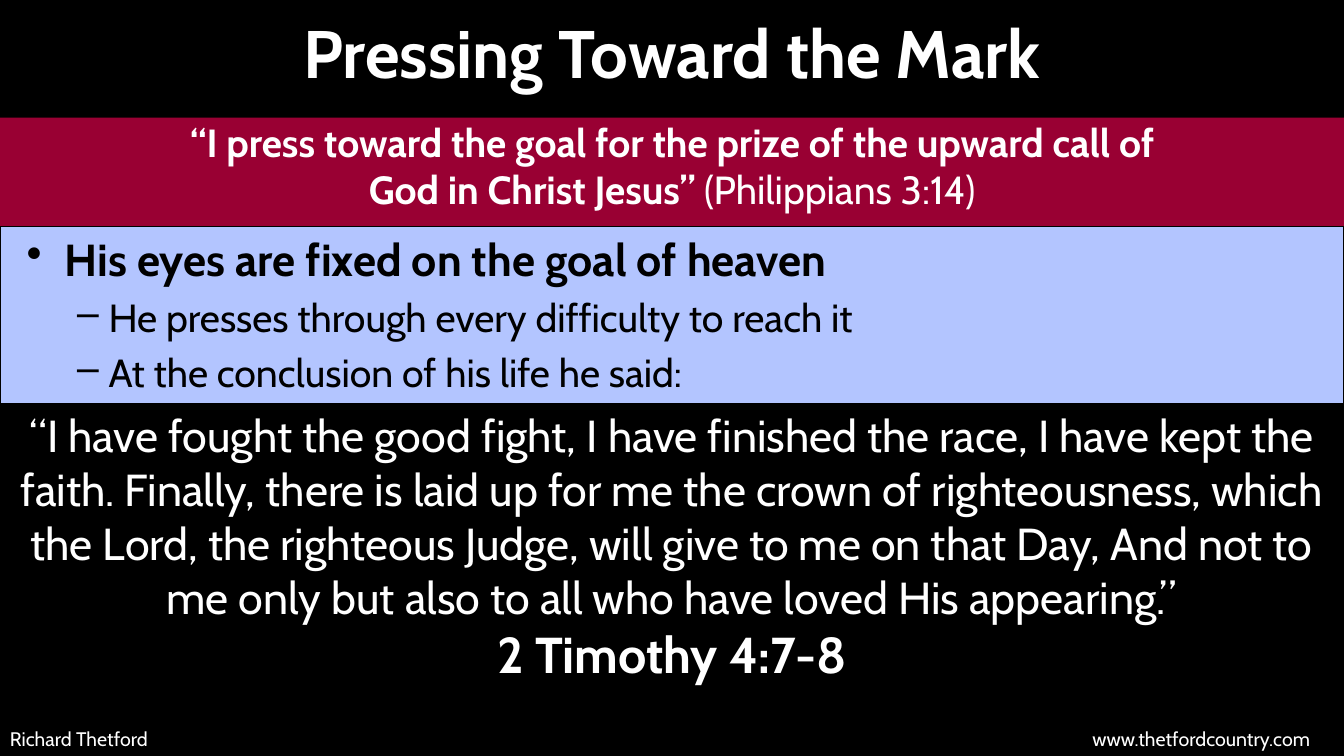
from lxml import etree
from pptx import Presentation
from pptx import util as u
from pptx.dml.color import RGBColor
from pptx.enum import shapes, text
from pptx.oxml.ns import qn

Pt = u.Pt
WIDE, HIGH = 960, 540
WHITE, BLACK, RED, BLUE = "FFFFFF", "000000", "990033", "B3C5FF"
MID, LEFT, RIGHT = text.PP_ALIGN.CENTER, text.PP_ALIGN.LEFT, text.PP_ALIGN.RIGHT


def paint(target, hue):
    target.solid()
    target.fore_color.rgb = RGBColor.from_string(hue)


def band(slide, box, hue, edge=None):
    rect = slide.shapes.add_shape(shapes.MSO_SHAPE.RECTANGLE, *map(Pt, box))
    rect.shadow.inherit = False
    paint(rect.fill, hue)
    if edge:
        paint(rect.line.fill, edge)
        rect.line.width = Pt(0.75)
    else:
        rect.line.fill.background()


def frame(slide, box):
    tf = slide.shapes.add_textbox(*map(Pt, box)).text_frame
    tf.word_wrap = True
    return tf


def style(para, size, hue=WHITE, bold=False, align=MID):
    para.alignment = align
    font = para.font
    font.name, font.size, font.bold = "Cabin", Pt(size), bold
    paint(font.fill, hue)


def bullet(para, mark, margin, hang):
    props = para._p.get_or_add_pPr()
    props.set("marL", str(Pt(margin)))
    props.set("indent", str(-Pt(hang)))
    char = etree.Element(qn("a:buChar"), char=mark)
    props.find(qn("a:defRPr")).addprevious(char)


# Heading
def title(slide, box):
    tf = frame(slide, box)
    tf.vertical_anchor = text.MSO_ANCHOR.MIDDLE
    para = tf.paragraphs[0]
    para.text = "Pressing Toward the Mark"
    style(para, 48, bold=True)


# Key verse on the red band
def verse(slide, box):
    x, y, w, h = box
    band(slide, box, RED)
    para = frame(slide, (x, y - 3, w, h - 3)).paragraphs[0]
    style(para, 28)
    lines = ("“I press toward the goal for the prize of the upward call of",
             "God in Christ Jesus” ")
    for i, line in enumerate(lines):
        if i:
            para.add_line_break()
        run = para.add_run()
        run.text, run.font.bold = line, True
    para.add_run().text = "(Philippians 3:14)"


# Bulleted points on the blue band
def points(slide, box):
    x, y, w, h = box
    band(slide, box, BLUE, BLACK)
    tf = frame(slide, (x + 12, y, w - 24, h + 6))
    head, *subs = ("His eyes are fixed on the goal of heaven",
                   "He presses through every difficulty to reach it",
                   "At the conclusion of his life he said:")
    para = tf.paragraphs[0]
    para.text = head
    style(para, 32, BLACK, True, LEFT)
    bullet(para, "•", 27, 27)
    for sub in subs:
        para = tf.add_paragraph()
        para.text, para.level = sub, 1
        para.space_before = Pt(5.6)
        style(para, 28, BLACK, align=LEFT)
        bullet(para, "–", 58.5, 22.5)


# Closing quotation and its reference
def quote(slide, box):
    tf = frame(slide, box)
    para = tf.paragraphs[0]
    para.text = ("“I have fought the good fight, I have finished the race, "
                 "I have kept the faith. Finally, there is laid up for me "
                 "the crown of righteousness, which the Lord, the righteous "
                 "Judge, will give to me on that Day, And not to me only but "
                 "also to all who have loved His appearing.”")
    style(para, 32)
    para = tf.add_paragraph()
    para.text = "2 Timothy 4:7-8"
    style(para, 36, bold=True)


# Author and site
def footer(slide, box):
    x, y, w, h = box
    half = w / 2
    for left, words, align in ((x, "Richard Thetford", LEFT),
                               (x + half, "www.thetfordcountry.com", RIGHT)):
        para = frame(slide, (left, y, half, h)).paragraphs[0]
        para.text = words
        style(para, 14, align=align)


def main():
    deck = Presentation()
    deck.slide_width, deck.slide_height = Pt(WIDE), Pt(HIGH)
    slide = deck.slides.add_slide(deck.slide_layouts[6])
    paint(slide.background.fill, BLACK)
    title(slide, (156, 6, 648, 62))
    verse(slide, (0, 84, WIDE, 78))
    points(slide, (0, 162, WIDE, 126))
    quote(slide, (0, 288, WIDE, 206))
    footer(slide, (0, 515.5, 943, 24.5))
    deck.save("out.pptx")


if __name__ == "__main__":
    main()
